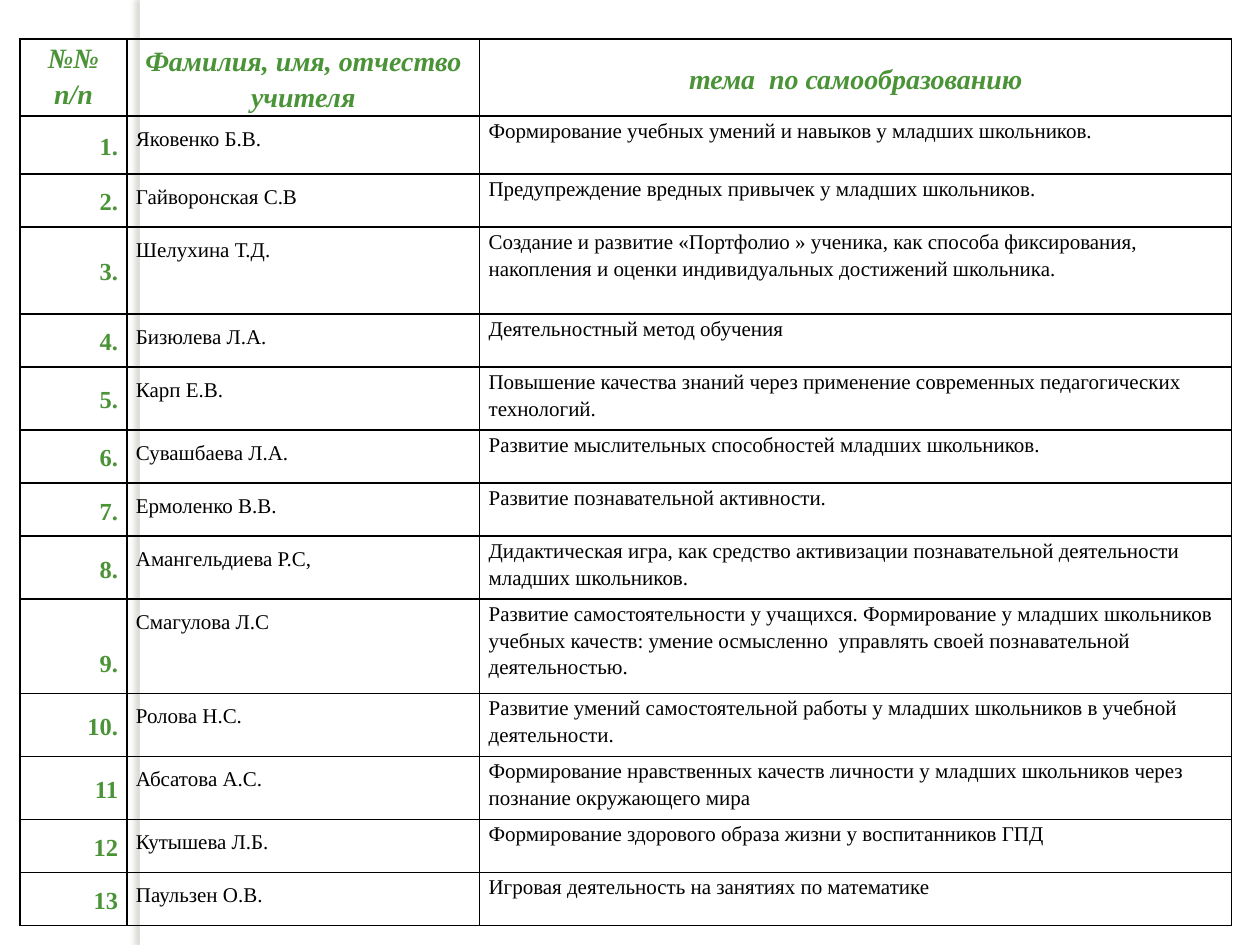
from lxml import etree
from pptx import Presentation
from pptx import util as u
from pptx.dml.color import RGBColor
from pptx.enum import shapes, text
from pptx.oxml import parse_xml
from pptx.oxml.ns import nsdecls, qn

GREEN = RGBColor(0x4A, 0x93, 0x37)
BLACK = RGBColor(0, 0, 0)
WHITE = RGBColor(0xFF, 0xFF, 0xFF)
LEFT, CENTER, RIGHT = text.PP_ALIGN.LEFT, text.PP_ALIGN.CENTER, text.PP_ALIGN.RIGHT
TOP, MIDDLE = text.MSO_ANCHOR.TOP, text.MSO_ANCHOR.MIDDLE

COLUMNS = [2.16, 7.11, 15.16]
HEADER = ["№№\nп/п", "Фамилия, имя, отчество учителя", "тема  по самообразованию"]
HEADER_HEIGHT = 1.55
# Row height in cm, teacher, topic
TEACHERS = [
    (1.17, "Яковенко Б.В.", "Формирование учебных умений и навыков у младших школьников."),
    (1.07, "Гайворонская С.В", "Предупреждение вредных привычек у младших школьников."),
    (1.75, "Шелухина Т.Д.", "Создание и развитие «Портфолио » ученика, как способа фиксирования, "
                            "накопления и оценки индивидуальных достижений школьника."),
    (1.07, "Бизюлева Л.А.", "Деятельностный метод обучения"),
    (1.27, "Карп Е.В.", "Повышение качества знаний через применение современных "
                        "педагогических технологий."),
    (1.07, "Сувашбаева Л.А.", "Развитие мыслительных способностей младших школьников."),
    (1.07, "Ермоленко В.В.", "Развитие познавательной активности."),
    (1.27, "Амангельдиева Р.С,", "Дидактическая игра, как средство активизации "
                                 "познавательной деятельности младших школьников."),
    (1.9, "Смагулова Л.С", "Развитие самостоятельности у учащихся. Формирование у младших "
                           "школьников учебных качеств: умение осмысленно  управлять своей "
                           "познавательной деятельностью."),
    (1.27, "Ролова Н.С.", "Развитие умений самостоятельной работы у младших школьников "
                          "в учебной деятельности."),
    (1.27, "Абсатова А.С.", "Формирование нравственных качеств личности у младших школьников "
                            "через познание окружающего мира"),
    (1.07, "Кутышева Л.Б.", "Формирование здорового образа жизни у воспитанников ГПД"),
    (1.07, "Паульзен О.В.", "Игровая деятельность на занятиях по математике"),
]


def add_borders(cell):
    """Put a thin black line on all four sides of the cell."""
    tcPr = cell._tc.get_or_add_tcPr()
    for side in ("lnL", "lnR", "lnT", "lnB"):
        ln = etree.SubElement(tcPr, qn(f"a:{side}"), w=str(u.Pt(1)))
        fill = etree.SubElement(ln, qn("a:solidFill"))
        etree.SubElement(fill, qn("a:srgbClr"), val=str(BLACK))


def fill_cell(cell, words, size, color, align, anchor, spacing=1.15, bold=False, italic=False):
    add_borders(cell)
    cell.fill.background()
    cell.margin_left = cell.margin_right = u.Cm(0.18)
    cell.margin_top = cell.margin_bottom = 0
    cell.vertical_anchor = anchor
    cell.text_frame.text = words
    for p in cell.text_frame.paragraphs:
        p.alignment = align
        p.line_spacing = spacing
        p.font.name = "Times New Roman"
        p.font.size = u.Pt(size)
        p.font.bold = bold
        p.font.italic = italic
        p.font.color.rgb = color


prs = Presentation()
prs.slide_width, prs.slide_height = u.Cm(25.4), u.Cm(19.05)
s = prs.slides.add_slide(prs.slide_layouts[6])

# White strip casting a soft shadow to its left
strip = s.shapes.add_shape(shapes.MSO_SHAPE.RECTANGLE, u.Cm(2.82), 0, u.Cm(0.2), prs.slide_height)
strip.fill.solid()
strip.fill.fore_color.rgb = WHITE
strip.line.fill.background()
strip._element.spPr.append(parse_xml(
    f'<a:effectLst {nsdecls("a")}>'
    f'<a:outerShdw blurRad="{u.Pt(3)}" dist="{u.Pt(3)}" dir="10800000" algn="ctr" rotWithShape="0">'
    '<a:srgbClr val="736F63"><a:alpha val="25000"/></a:srgbClr>'
    '</a:outerShdw></a:effectLst>'))

heights = [HEADER_HEIGHT] + [height for height, _, _ in TEACHERS]
table = s.shapes.add_table(len(heights), len(COLUMNS), u.Cm(0.4), u.Cm(0.79),
                           u.Cm(sum(COLUMNS)), u.Cm(sum(heights))).table
table.first_row = table.horz_banding = False
for column, width in zip(table.columns, COLUMNS):
    column.width = u.Cm(width)
for row, height in zip(table.rows, heights):
    row.height = u.Cm(height)

for col, words in enumerate(HEADER):
    fill_cell(table.cell(0, col), words, 16, GREEN, CENTER, MIDDLE if col else TOP,
              bold=True, italic=True)

for n, (_, teacher, topic) in enumerate(TEACHERS, start=1):
    number = f"{n}." if n <= 10 else str(n)
    fill_cell(table.cell(n, 0), number, 14, GREEN, RIGHT, MIDDLE, bold=True)
    fill_cell(table.cell(n, 1), teacher, 12, BLACK, LEFT, TOP, spacing=1.5)
    fill_cell(table.cell(n, 2), topic, 12, BLACK, LEFT, TOP)
table.cell(9, 0).margin_top = u.Cm(0.65)  # this number sits one line lower

prs.save("out.pptx")
